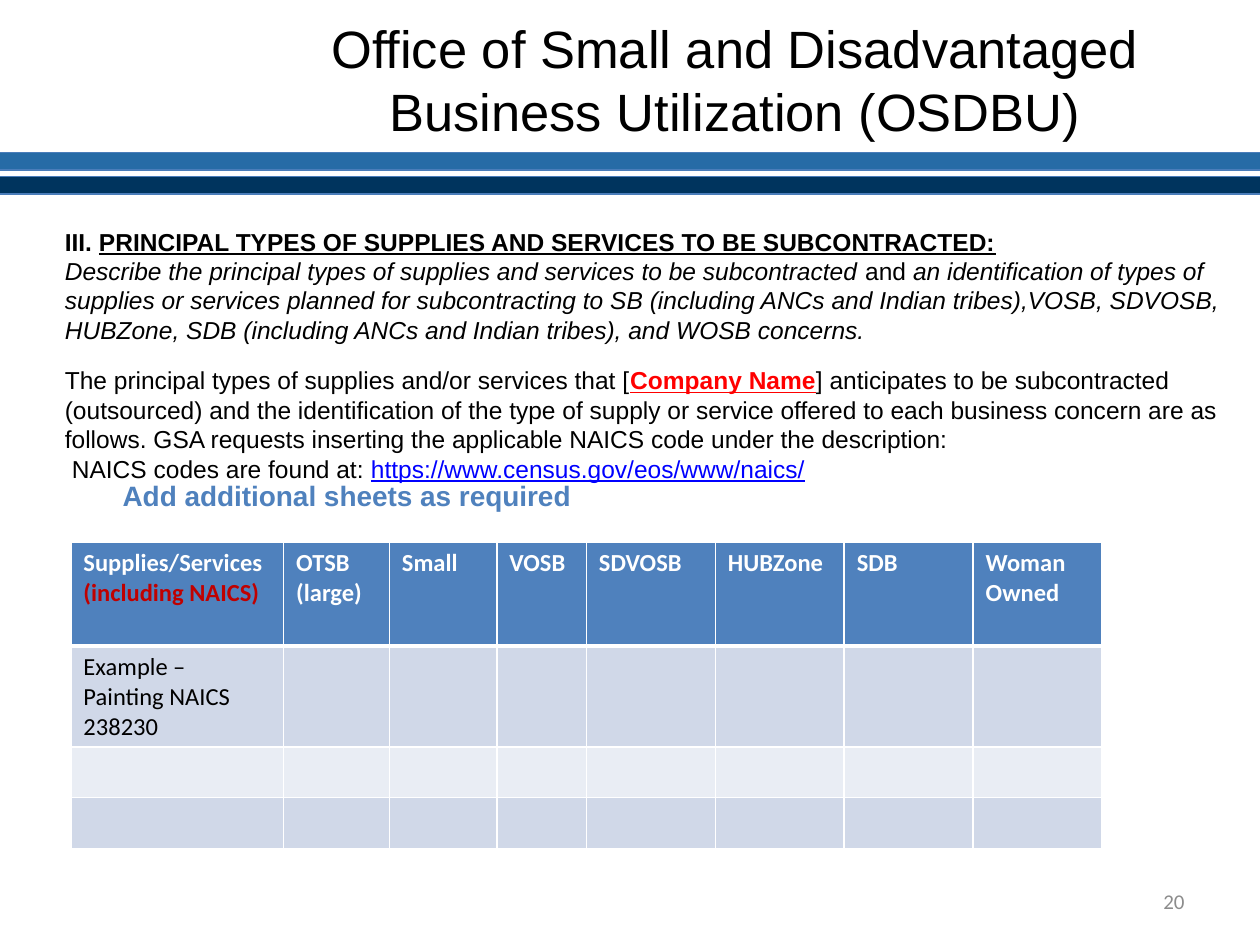
from pptx import Presentation
from pptx.dml.color import RGBColor
from pptx.enum import shapes, text
from pptx.oxml import parse_xml
from pptx.oxml.ns import nsdecls
from pptx.util import Pt

BLACK, WHITE, BLUE = "000000", "FFFFFF", "4F81BD"
ITALIC = {"italic": True}
BOLD = {"bold": True}
LINK = {"underline": True, "color": "0000FF"}

BANDS = [(87.1, "266BA6"), (100.8, "00345E")]
TITLE = "Office of Small and Disadvantaged Business Utilization (OSDBU)"
BODY = [
    ([("III. ", BOLD),
      ("PRINCIPAL TYPES OF SUPPLIES AND SERVICES TO BE SUBCONTRACTED:",
       {"bold": True, "underline": True})], {}),
    ([("Describe the principal types of supplies and services to be subcontracted ", ITALIC),
      ("and ", {}),
      ("an identification of types of supplies or services planned for subcontracting to SB "
       "(including ANCs and Indian tribes),VOSB, SDVOSB, HUBZone, SDB (including ANCs and "
       "Indian tribes), and WOSB concerns.", ITALIC)], {}),
    ([("The principal types of supplies and/or services that [", {}),
      ("Company Name", {"bold": True, "underline": True, "color": "FF0000"}),
      ("] anticipates to be subcontracted (outsourced) and the identification of the type of "
       "supply or service offered to each business concern are as follows. GSA requests "
       "inserting the applicable NAICS code under the description:", {})],
     {"space_before": Pt(12)}),
    ([("NAICS codes are found at: ", {}),
      ("https://www.census.gov/eos/www/naics/", LINK)], {"indent": 4}),
]
NOTE = "Add additional sheets as required"
HEADER = [
    [("Supplies/Services ", {}), ("(including NAICS)", {"color": "C00000"})],
    *[[(name, {})] for name in
      ("OTSB (large)", "Small", "VOSB", "SDVOSB", "HUBZone", "SDB", "Woman Owned")],
]
EXAMPLE = "Example – Painting NAICS 238230"
COLUMNS = [121.6, 60.4, 61.4, 51.2] + [73.7] * 4
ROWS = [(59.6, BLUE), (41, "D0D8E8"), (29, "E9EDF4"), (29, "D0D8E8")]


def rgb(value):
    return RGBColor.from_string(value)


def write(p, runs, **base):
    for words, style in runs:
        r = p.add_run()
        r.text = words
        for name, value in {"color": BLACK, **base, **style}.items():
            if name == "color":
                r.font.color.rgb = rgb(value)
            else:
                setattr(r.font, name, value)


def text_box(s, box, paragraphs, frame=None, **base):
    tf = s.shapes.add_textbox(*map(Pt, box)).text_frame
    for name, value in {"word_wrap": True, **(frame or {})}.items():
        setattr(tf, name, value)
    for i, (runs, layout) in enumerate(paragraphs):
        p = tf.add_paragraph() if i else tf.paragraphs[0]
        for name, value in layout.items():
            if name == "indent":
                p._p.get_or_add_pPr().set("indent", str(Pt(value)))
            else:
                setattr(p, name, value)
        write(p, runs, **base)


def border(cell, bottom):
    tc_pr = cell._tc.get_or_add_tcPr()
    sides = {"lnL": 1, "lnR": 1, "lnT": 1, "lnB": bottom}
    for i, (side, width) in enumerate(sides.items()):
        tc_pr.insert(i, parse_xml(
            f'<a:{side} {nsdecls("a")} w="{Pt(width)}"><a:solidFill>'
            f'<a:srgbClr val="{WHITE}"/></a:solidFill></a:{side}>'))


def add_bands(s):
    for top, color in BANDS:
        sp = s.shapes.add_shape(shapes.MSO_SHAPE.RECTANGLE, Pt(-6), Pt(top), Pt(732), Pt(10))
        sp.shadow.inherit = False
        sp.fill.solid()
        sp.fill.fore_color.rgb = rgb(color)
        sp.line.color.rgb = rgb("4A7DBA")
        sp.line.width = Pt(0.75)


def add_supply_table(s):
    table = s.shapes.add_table(
        len(ROWS), len(COLUMNS), Pt(40.5), Pt(309.6),
        Pt(sum(COLUMNS)), Pt(sum(height for height, _ in ROWS))).table
    for column, width in zip(table.columns, COLUMNS):
        column.width = Pt(width)
    for i, (height, color) in enumerate(ROWS):
        table.rows[i].height = Pt(height)
        for cell in table.rows[i].cells:
            cell.fill.solid()
            cell.fill.fore_color.rgb = rgb(color)
            border(cell, 1 if i else 3)
    font = {"name": "Calibri", "size": Pt(14)}
    for j, runs in enumerate(HEADER):
        write(table.cell(0, j).text_frame.paragraphs[0], runs,
              **{**font, "bold": True, "color": WHITE})
    write(table.cell(1, 0).text_frame.paragraphs[0], [(EXAMPLE, {})], bold=False, **font)


def main():
    prs = Presentation()
    prs.slide_width, prs.slide_height = Pt(720), Pt(540)
    s = prs.slides.add_slide(prs.slide_layouts[6])
    middle = {"vertical_anchor": text.MSO_ANCHOR.MIDDLE}
    add_bands(s)
    text_box(s, (516, 500.4, 168, 28.8),
             [([("20", {})], {"alignment": text.PP_ALIGN.RIGHT})],
             middle, name="Calibri", size=Pt(12), color="8C8C8C")
    text_box(s, (120, 0, 600, 90),
             [([(TITLE, {})], {"alignment": text.PP_ALIGN.CENTER})],
             middle, name="Arial", size=Pt(30))
    text_box(s, (63, 270, 631, 32), [([(NOTE, BOLD)], {})],
             name="Arial", size=Pt(16), color=BLUE)
    text_box(s, (30, 126, 678, 155), BODY, name="Arial", size=Pt(14))
    add_supply_table(s)
    prs.save("out.pptx")


if __name__ == "__main__":
    main()
